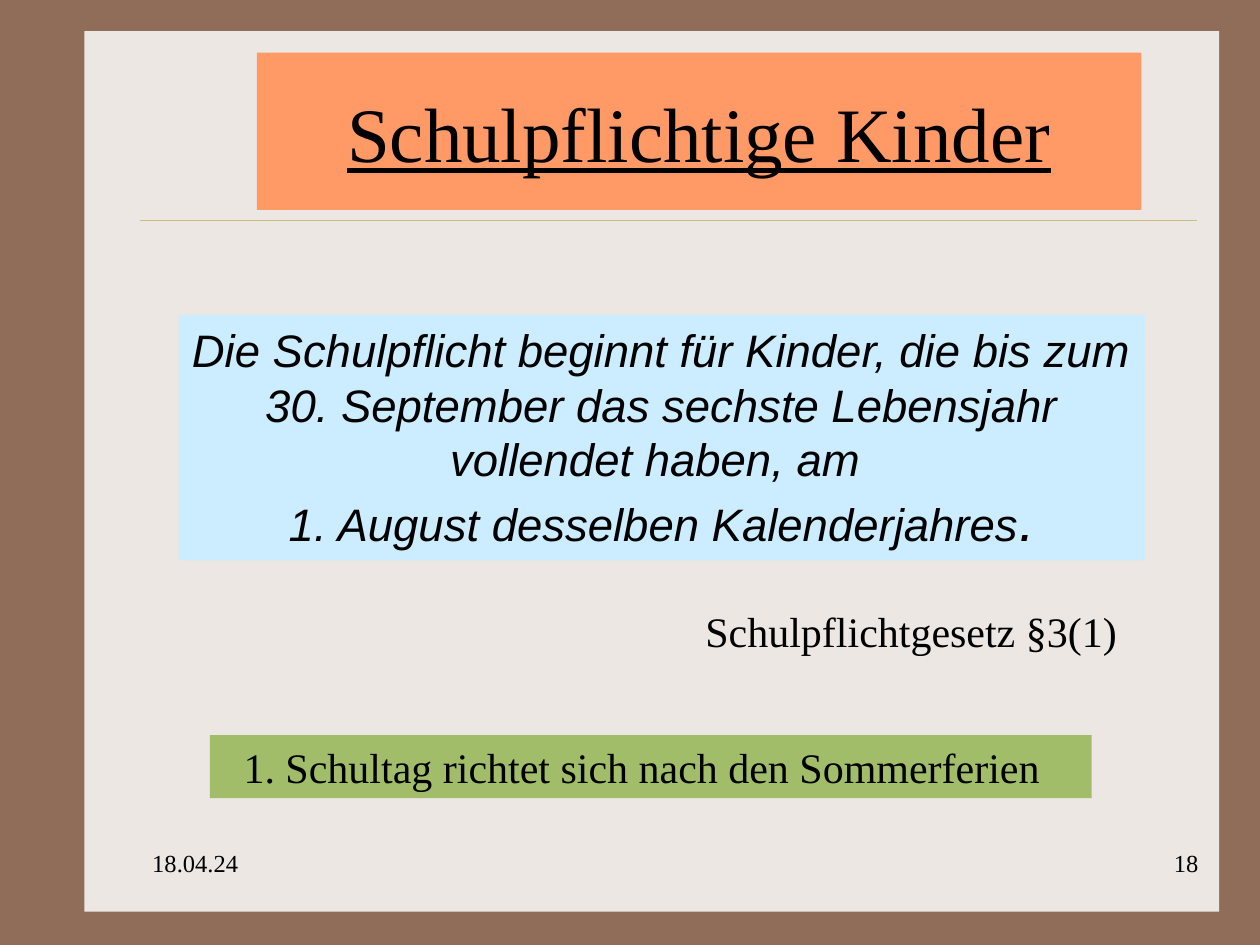
from lxml.etree import SubElement
from pptx import Presentation
from pptx.dml.color import RGBColor
from pptx.enum.shapes import MSO_CONNECTOR, MSO_SHAPE
from pptx.enum.text import MSO_ANCHOR, PP_ALIGN
from pptx.oxml.ns import qn
from pptx.util import Cm, Pt

BROWN = RGBColor(0x90, 0x6D, 0x58)
CREAM = RGBColor(0xED, 0xE7, 0xE3)
GOLD = RGBColor(0xCB, 0xBD, 0x83)
ORANGE = RGBColor(0xFF, 0x99, 0x66)
BLUE = RGBColor(0xCC, 0xEC, 0xFF)
GREEN = RGBColor(0xA1, 0xBD, 0x69)
BLACK = RGBColor(0, 0, 0)
SERIF = "Times New Roman"


def fill_solid(fill, color):
    fill.solid()
    fill.fore_color.rgb = color


def add_panel(s, x, y, w, h, color):
    sp = s.shapes.add_shape(MSO_SHAPE.RECTANGLE, Cm(x), Cm(y), Cm(w), Cm(h))
    sp.shadow.inherit = False
    fill_solid(sp.fill, color)
    sp.line.fill.background()
    return sp


def add_rule(s, x1, x2, y):
    line = s.shapes.add_connector(MSO_CONNECTOR.STRAIGHT, Cm(x1), Cm(y), Cm(x2), Cm(y))
    line.line.color.rgb = GOLD
    line.line.width = Pt(0.25)
    SubElement(line._element.spPr, qn("a:effectLst"))


def write(sp, text, size, name=SERIF, align=PP_ALIGN.LEFT, anchor=MSO_ANCHOR.MIDDLE):
    tf = sp.text_frame
    tf.word_wrap = True
    tf.vertical_anchor = anchor
    tf.margin_left = tf.margin_right = Cm(0.25)
    tf.margin_top = tf.margin_bottom = Cm(0.13)
    p = tf.paragraphs[0]
    p.text = text
    p.alignment = align
    p.font.size = Pt(size)
    p.font.name = name
    p.font.color.rgb = BLACK
    return p


def add_text(s, x, y, w, h, text, size, align=PP_ALIGN.LEFT):
    sp = s.shapes.add_textbox(Cm(x), Cm(y), Cm(w), Cm(h))
    write(sp, text, size, align=align, anchor=MSO_ANCHOR.TOP)


def set_title(s, text):
    sp = s.shapes.title
    sp.left, sp.top, sp.width, sp.height = Cm(5.18), Cm(1.06), Cm(17.83), Cm(3.17)
    fill_solid(sp.fill, ORANGE)
    p = write(sp, text, 44, align=PP_ALIGN.CENTER)
    p.font.underline = True


def add_law(s):
    sp = add_panel(s, 3.6, 6.35, 19.48, 4.95, BLUE)
    text = ("Die Schulpflicht beginnt für Kinder, die bis zum 30. September das sechste "
            "Lebensjahr vollendet haben, am \v1. August desselben Kalenderjahres")
    p = write(sp, text, 26, "Arial", PP_ALIGN.CENTER)
    p.font.italic = True
    r = p.add_run()
    r.text = "."
    r.font.size = Pt(32)


def add_first_day(s):
    sp = add_panel(s, 4.23, 14.82, 17.78, 1.27, GREEN)
    write(sp, "1. Schultag richtet sich nach den Sommerferien", 24)
    sp.text_frame.margin_left = Cm(0.68)


def main():
    prs = Presentation()
    prs.slide_width, prs.slide_height = Cm(25.4), Cm(19.05)
    s = prs.slides.add_slide(prs.slide_layouts[5])
    fill_solid(s.background.fill, BROWN)
    page = add_panel(s, 1.7, 0.63, 22.88, 17.75, CREAM)
    s.shapes._spTree.insert(2, page._element)
    add_rule(s, 2.82, 24.13, 4.44)
    set_title(s, "Schulpflichtige Kinder")
    add_law(s)
    add_text(s, 13.97, 12.07, 9.1, 1.27, "Schulpflichtgesetz §3(1)", 24)
    add_first_day(s)
    add_text(s, 2.82, 16.97, 5.28, 1.27, "18.04.24", 14)
    add_text(s, 19.13, 16.97, 5.28, 1.27, "18", 14, PP_ALIGN.RIGHT)
    prs.save("out.pptx")


if __name__ == "__main__":
    main()
